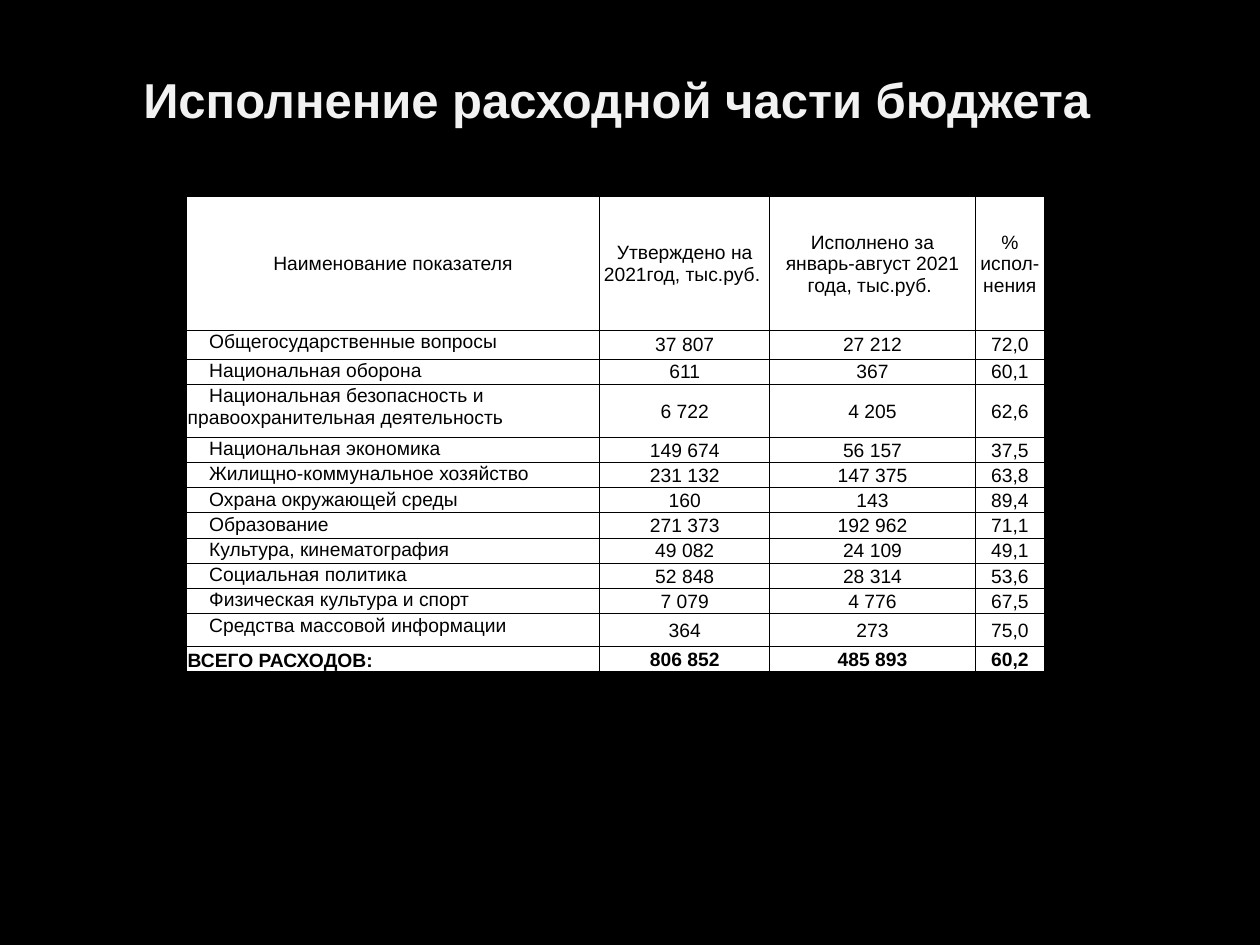
"""Build a slide with a table of budget expenditure execution."""
from lxml import etree
from pptx import Presentation
from pptx.dml.color import RGBColor
from pptx.enum.text import MSO_ANCHOR, PP_ALIGN
from pptx.oxml.ns import qn
from pptx.util import Inches, Pt

CENTER, LEFT = PP_ALIGN.CENTER, PP_ALIGN.LEFT
TOP, MIDDLE, BOTTOM = MSO_ANCHOR.TOP, MSO_ANCHOR.MIDDLE, MSO_ANCHOR.BOTTOM

THEME = {
    "font": "Arial",
    "background": "000000",
    "title": "F2F2F2",
    "text": "000000",
    "cell": "FFFFFF",
    "border": "000000",
    "title_size": 28,
    "table_size": 11,
    "border_width": 0.5,
}
ROWS = [
    ("Наименование показателя", "Утверждено на 2021год, тыс.руб. ",
     "Исполнено за\vянварь-август 2021 года, тыс.руб. ", "% испол-нения"),
    ("Общегосударственные вопросы", "37 807", "27 212", "72,0"),
    ("Национальная оборона", "611", "367", "60,1"),
    ("Национальная безопасность и правоохранительная деятельность",
     "6 722", "4 205", "62,6"),
    ("Национальная экономика", "149 674", "56 157", "37,5"),
    ("Жилищно-коммунальное хозяйство", "231 132", "147 375", "63,8"),
    ("Охрана окружающей среды", "160", "143", "89,4"),
    ("Образование", "271 373", "192 962", "71,1"),
    ("Культура, кинематография", "49 082", "24 109", "49,1"),
    ("Социальная политика", "52 848", "28 314", "53,6"),
    ("Физическая культура и спорт", "7 079", "4 776", "67,5"),
    ("Средства массовой информации", "364", "273", "75,0"),
    ("ВСЕГО РАСХОДОВ:", "806 852", "485 893", "60,2"),
]
COLUMN_WIDTHS = [3.28, 1.35, 1.63, 0.55]
ROW_HEIGHTS = {0: 1.06, 1: 0.23, 3: 0.42, 11: 0.26}
USUAL_HEIGHT = 0.2
heights = [ROW_HEIGHTS.get(index, USUAL_HEIGHT) for index in range(len(ROWS))]
TITLE_MARGINS = {"margin_left": Inches(0.1), "margin_right": Inches(0.31)}
CELL_MARGINS = {"margin_left": Inches(0.01), "margin_right": Inches(0.01),
                "margin_top": Inches(0.01), "margin_bottom": 0}


def write(frame, text, align, size, color, bold):
    para = frame.paragraphs[0]
    para.text = text
    para.alignment = align
    values = {"name": THEME["font"], "size": Pt(size), "bold": bold}
    for span in para.runs:
        for name, value in values.items():
            setattr(span.font, name, value)
        span.font.color.rgb = RGBColor.from_string(color)
    return para


def add_borders(cell):
    properties = cell._tc.get_or_add_tcPr()
    for position, side in enumerate(("lnL", "lnR", "lnT", "lnB")):
        line = etree.Element(qn(f"a:{side}"), w=str(Pt(THEME["border_width"])))
        fill = etree.SubElement(line, qn("a:solidFill"))
        etree.SubElement(fill, qn("a:srgbClr"), val=THEME["border"])
        properties.insert(position, line)


deck = Presentation()
deck.slide_width, deck.slide_height = Inches(10), Inches(7.5)
width, height = deck.slide_width, deck.slide_height
page = deck.slides.add_slide(deck.slide_layouts[6])
page.background.fill.solid()
page.background.fill.fore_color.rgb = RGBColor.from_string(THEME["background"])

title = page.shapes.add_textbox(int(width * 0.05), int(height * 0.04),
                                int(width * 0.9), int(height * 0.13))
title_format = {"word_wrap": True, "vertical_anchor": MIDDLE, **TITLE_MARGINS}
for name, value in title_format.items():
    setattr(title.text_frame, name, value)
write(title.text_frame, "Исполнение расходной части бюджета", CENTER,
      THEME["title_size"], THEME["title"], True)

frame = page.shapes.add_table(
    len(ROWS), len(COLUMN_WIDTHS), Inches(1.48), Inches(1.56),
    Inches(sum(COLUMN_WIDTHS)), Inches(sum(heights)))
table = frame.table
for column, size in zip(table.columns, COLUMN_WIDTHS):
    column.width = Inches(size)
for row, size in zip(table.rows, heights):
    row.height = Inches(size)

last = len(ROWS) - 1
for row_index, values in enumerate(ROWS):
    for column_index, text in enumerate(values):
        is_label = column_index == 0 and row_index > 0
        is_total = row_index == last
        label_anchor = BOTTOM if is_total else TOP
        cell = table.cell(row_index, column_index)
        cell_format = {"vertical_anchor": label_anchor if is_label else MIDDLE,
                       **CELL_MARGINS}
        for name, value in cell_format.items():
            setattr(cell, name, value)
        cell.fill.solid()
        cell.fill.fore_color.rgb = RGBColor.from_string(THEME["cell"])
        add_borders(cell)
        para = write(cell.text_frame, text, LEFT if is_label else CENTER,
                     THEME["table_size"], THEME["text"], is_total)
        if is_label and not is_total:
            para._p.get_or_add_pPr().set("indent", str(Inches(0.17)))

deck.save("out.pptx")
